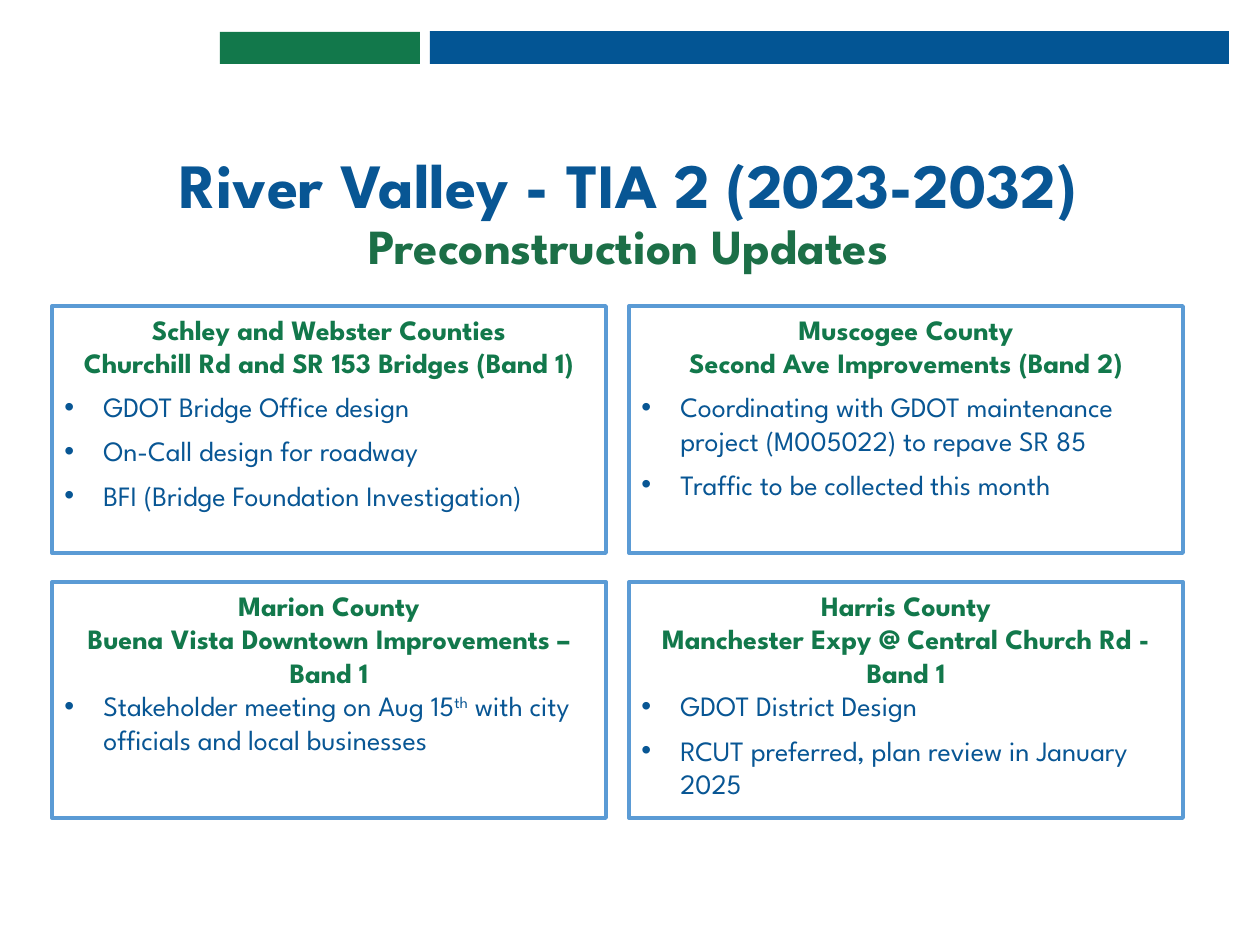
import pptx
import pptx.util
import pptx.dml.color
import pptx.enum.shapes
import pptx.enum.text
import pptx.oxml.ns
import lxml.etree

PX = 914400 / 126
BLUE = pptx.dml.color.RGBColor(0x08, 0x56, 0x94)
BAR_BLUE = pptx.dml.color.RGBColor(0x03, 0x55, 0x94)
GREEN = pptx.dml.color.RGBColor(0x12, 0x78, 0x4B)
SUBTITLE_GREEN = pptx.dml.color.RGBColor(0x1C, 0x6F, 0x47)
BORDER = pptx.dml.color.RGBColor(0x5B, 0x9B, 0xD5)
WHITE = pptx.dml.color.RGBColor(0xFF, 0xFF, 0xFF)
RECTANGLE = pptx.enum.shapes.MSO_SHAPE.RECTANGLE
ALIGN = pptx.enum.text.PP_ALIGN
ANCHOR = pptx.enum.text.MSO_ANCHOR


def add_rectangle(page, left, top, width, height, fill):
    box = page.shapes.add_shape(RECTANGLE, *(round(v * PX) for v in (left, top, width, height)))
    box.shadow.inherit = False
    box.fill.solid()
    box.fill.fore_color.rgb = fill
    box.line.fill.background()
    return box


def style(span, size, color, bold):
    span.font.name = "League Spartan"
    span.font.size = pptx.util.Pt(size)
    span.font.bold = bold
    span.font.color.rgb = color


deck = pptx.Presentation()
deck.slide_width = round(1260 * PX)
deck.slide_height = round(945 * PX)
page = deck.slides.add_slide(deck.slide_layouts[6])

add_rectangle(page, 430, 31, 799, 33, BAR_BLUE)
add_rectangle(page, 220, 32, 200, 32, GREEN)

title = page.shapes.add_textbox(*(round(v * PX) for v in (123, 140, 1011, 141)))
title.text_frame.word_wrap = True
title.text_frame.vertical_anchor = ANCHOR.BOTTOM
para = title.text_frame.paragraphs[0]
para.text = "River Valley - TIA 2 (2023-2032)\vPreconstruction Updates"
para.alignment = ALIGN.CENTER
para.line_spacing = 0.9
style(para.runs[0], 36, BLUE, True)
style(para.runs[1], 28, SUBTITLE_GREEN, True)

LEFTS = [52, 629]
ROWS = [(306, 247), (582, 236)]
CARDS = [
    (0, 0, ["Schley and Webster Counties", "Churchill Rd and SR 153 Bridges (Band 1)"],
     ["GDOT Bridge Office design", "On-Call design for roadway",
      "BFI (Bridge Foundation Investigation)"]),
    (0, 1, ["Muscogee County", "Second Ave Improvements (Band 2)"],
     ["Coordinating with GDOT maintenance project (M005022) to repave SR 85",
      "Traffic to be collected this month"]),
    (1, 0, ["Marion County", "Buena Vista Downtown Improvements –", "Band 1"],
     ["Stakeholder meeting on Aug 15^th^ with city officials and local businesses"]),
    (1, 1, ["Harris County", "Manchester Expy @ Central Church Rd -", "Band 1"],
     ["GDOT District Design", "RCUT preferred, plan review in January 2025"]),
]

for row, column, headings, bullets in CARDS:
    top, height = ROWS[row]
    card = add_rectangle(page, LEFTS[column], top, 554, height, WHITE)
    card.line.color.rgb = BORDER
    card.line.width = pptx.util.Pt(2.25)
    frame = card.text_frame
    frame.word_wrap = True
    frame.vertical_anchor = ANCHOR.TOP
    frame.text = "\n".join(headings)
    for para in frame.paragraphs:
        para.alignment = ALIGN.CENTER
        style(para.runs[0], 16, GREEN, True)
    for index, bullet in enumerate(bullets):
        para = frame.add_paragraph()
        para.alignment = ALIGN.LEFT
        if index > 0 or row == 0:
            para.space_before = pptx.util.Pt(6)
        properties = para._p.get_or_add_pPr()
        properties.set("marL", str(round(39 * PX)))
        properties.set("indent", str(round(-39 * PX)))
        font = lxml.etree.SubElement(properties, pptx.oxml.ns.qn("a:buFont"))
        font.set("typeface", "Arial")
        mark = lxml.etree.SubElement(properties, pptx.oxml.ns.qn("a:buChar"))
        mark.set("char", "•")
        for part, words in enumerate(bullet.split("^")):
            span = para.add_run()
            span.text = words
            style(span, 16, BLUE, False)
            if part == 1:
                span.font._element.set("baseline", "30000")

deck.save("out.pptx")
